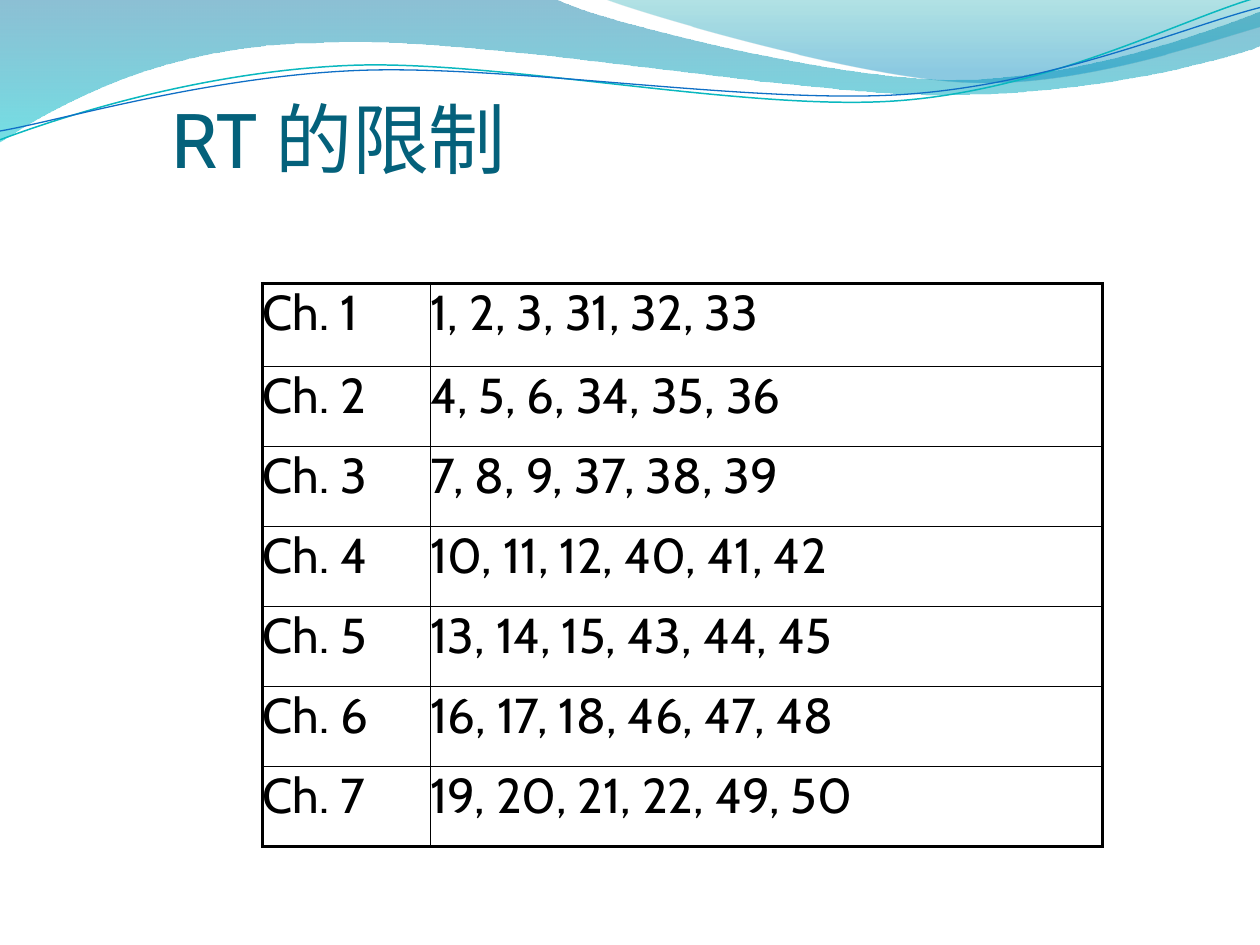
from lxml import etree
from pptx import Presentation, util as u
from pptx.dml.color import RGBColor
from pptx.enum import text
from pptx.oxml import ns

COLORS = {"title": "04617B", "ink": "000000", "teal_line": "0AB8BF", "blue_line": "0F6FC6",
          "deep_blue": "0074A1", "cyan": "00C6CF", "green": "00A1A9", "sky": "008BBF"}
FONT = "Cabin"
GRID_COLUMNS, GRID_ROWS = 24, 60

# Outlines in tenths of the slide width: 2 numbers are a line's end, 6 are a Bezier curve
BANDS = [
    {"start": (0, -0.01),
     "segments": [(4.4, -0.01), (4.76, 0.17, 6.64, 0.63, 7.58, 0.63),
                  (8.53, 0.63, 9.58, 0.26, 10, 0.09), (10.01, 0.36),
                  (9.83, 0.44, 8.7, 0.76, 7.46, 0.75), (6.22, 0.75, 3.82, 0.28, 2.57, 0.34),
                  (1.29, 0.35, 0.46, 0.83, -0.01, 1.13)],
     "stops": [(0, "deep_blue", 45), (1, "cyan", 55)]},
    {"start": (4.79, -0.01),
     "segments": [(5.09, 0.11, 6.82, 0.62, 7.69, 0.65), (8.56, 0.69, 9.61, 0.32, 10, 0.21),
                  (10, 0)],
     "stops": [(0, "green", 30), (0.8, "sky", 45)]},
]
STROKES = [
    {"start": (0, 1.11),
     "segments": [(0.48, 0.93, 1.58, 0.57, 2.77, 0.52), (3.95, 0.47, 5.93, 0.89, 7.13, 0.8),
                  (8.33, 0.71, 9.38, 0.15, 9.98, -0.02)],
     "color": "teal_line", "width": 0.85},
    {"start": (0, 1.04),
     "segments": [(0.47, 0.96, 1.64, 0.61, 2.83, 0.56), (4.03, 0.51, 5.97, 0.83, 7.17, 0.75),
                  (8.36, 0.67, 9.41, 0.21, 10, 0.06)],
     "color": "blue_line", "width": 0.75},
]
CHAPTERS = ["1, 2, 3, 31, 32, 33", "4, 5, 6, 34, 35, 36", "7, 8, 9, 37, 38, 39",
            "10, 11, 12, 40, 41, 42", "13, 14, 15, 43, 44, 45",
            "16, 17, 18, 46, 47, 48", "19, 20, 21, 22, 49, 50"]


def rgb(name):
    return RGBColor.from_string(COLORS[name])


def set_all(target, values):
    for name, value in values.items():
        setattr(target, name, value)


def format_run(run, size, color):
    set_all(run.font, {"name": FONT, "size": u.Pt(size), "bold": False})
    run.font.color.rgb = rgb(color)


def bend_curves(shape, segments):
    """Merge each curve's three straight steps into one Bezier element."""
    steps = iter(list(shape._element.iter(ns.qn("a:lnTo"))))
    for segment in segments:
        first = next(steps)
        if len(segment) == 6:
            first.tag = ns.qn("a:cubicBezTo")
            for _ in range(2):
                step = next(steps)
                first.append(step[0])
                step.getparent().remove(step)


def add_outline(slide, box, part, close):
    left, top, width, _ = box
    unit = width / 10
    pairs = [part["start"]]
    for segment in part["segments"]:
        pairs += zip(segment[::2], segment[1::2])
    points = [(left + x * unit, top + y * unit) for x, y in pairs]
    builder = slide.shapes.build_freeform(*points[0])
    builder.add_line_segments(points[1:], close=close)
    shape = builder.convert_to_shape()
    bend_curves(shape, part["segments"])
    shape.shadow.inherit = False
    return shape


def add_waves(slide, box):
    # Translucent gradient bands
    for band in BANDS:
        shape = add_outline(slide, box, band, True)
        shape.line.fill.background()
        shape.fill.gradient()
        shape.fill.gradient_angle = 270
        for stop, (position, color, _) in zip(shape.fill.gradient_stops, band["stops"]):
            stop.position = position
            stop.color.rgb = rgb(color)
        tags = shape.fill._xPr.iter(ns.qn("a:srgbClr"))
        for tag, (_, _, opacity) in zip(tags, band["stops"]):
            etree.SubElement(tag, ns.qn("a:alpha"), val=str(opacity * 1000))
    # Thin wave lines
    for stroke in STROKES:
        shape = add_outline(slide, box, stroke, False)
        shape.fill.background()
        shape.line.color.rgb = rgb(stroke["color"])
        shape.line.width = u.Pt(stroke["width"])


def add_title(slide, box, wording):
    title = slide.shapes.title
    set_all(title, dict(zip(("left", "top", "width", "height"), box)))
    set_all(title.text_frame, {"text": wording, "word_wrap": True,
                               "vertical_anchor": text.MSO_ANCHOR.MIDDLE})
    paragraph = title.text_frame.paragraphs[0]
    paragraph.alignment = text.PP_ALIGN.LEFT
    format_run(paragraph.runs[0], 44, "title")
    slide.shapes._spTree.append(title._element)  # in front of the waves


def set_borders(cell, widths):
    properties = cell._tc.get_or_add_tcPr()
    for side, width in widths.items():
        line = etree.SubElement(properties, ns.qn(f"a:ln{side}"), w=str(u.Pt(width)))
        fill = etree.SubElement(line, ns.qn("a:solidFill"))
        etree.SubElement(fill, ns.qn("a:srgbClr"), val=COLORS["ink"])


def add_chapter_table(slide, box):
    width, height = box[2:]
    last = len(CHAPTERS) - 1
    table = slide.shapes.add_table(len(CHAPTERS), 2, *box).table
    set_all(table, {"first_row": False, "horz_banding": False})
    table.columns[0].width = width // 5
    table.columns[1].width = width - width // 5
    # The first row is slightly taller, the others share the rest
    first_height = u.Inches(0.66)
    for index, row in enumerate(table.rows):
        row.height = (height - first_height) // last if index else first_height
    for index, numbers in enumerate(CHAPTERS):
        for column, wording in enumerate((f"Ch. {index + 1}", numbers)):
            cell = table.cell(index, column)
            set_all(cell, {"text": wording, "margin_left": 0, "margin_right": 0,
                           "margin_top": 0, "margin_bottom": 0})
            format_run(cell.text_frame.paragraphs[0].runs[0], 28, "ink")
            outer = {"L": column == 0, "R": column == 1, "T": index == 0, "B": index == last}
            set_borders(cell, {side: 2.25 if edge else 1 for side, edge in outer.items()})
            cell.fill.background()


def main():
    presentation = Presentation()
    set_all(presentation, {"slide_width": u.Inches(10), "slide_height": u.Inches(7.5)})
    column = presentation.slide_width / GRID_COLUMNS
    row = presentation.slide_height / GRID_ROWS

    def area(x, y, columns, rows):
        return round(x * column), round(y * row), round(columns * column), round(rows * row)

    slide = presentation.slides.add_slide(presentation.slide_layouts[5])
    add_waves(slide, area(0, 0, GRID_COLUMNS, GRID_ROWS))
    add_title(slide, area(3.02, 5.44, 20.45, 6.64), "RT 的限制")
    add_chapter_table(slide, area(5, 18, 16, 35.76))
    presentation.save("out.pptx")


if __name__ == "__main__":
    main()
